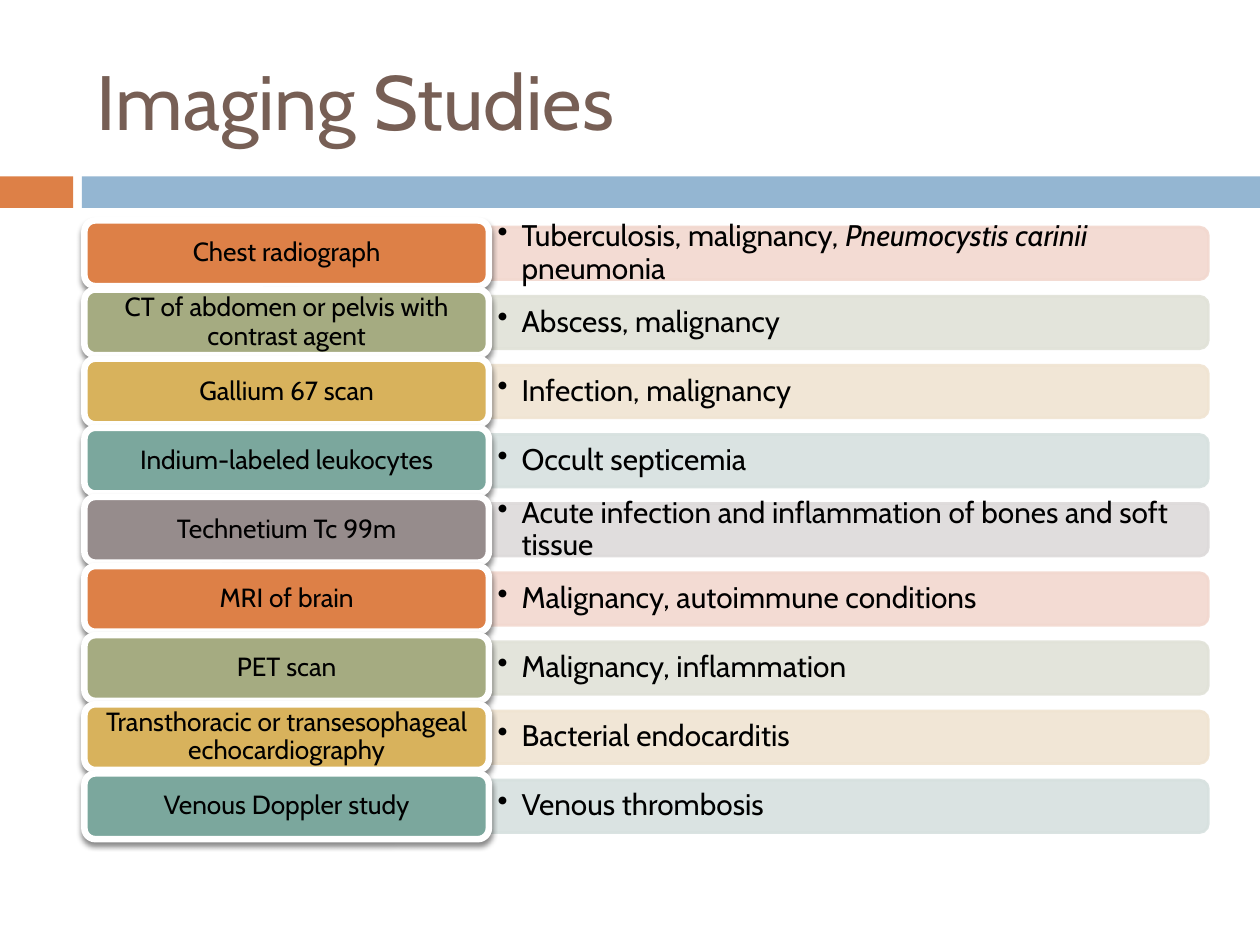
from dataclasses import dataclass
from itertools import cycle

from lxml.etree import SubElement
from pptx import Presentation
from pptx.dml.color import RGBColor
from pptx.enum.shapes import MSO_SHAPE as Preset
from pptx.enum.text import MSO_ANCHOR as Anchor, PP_ALIGN as Align
from pptx.oxml.ns import qn
from pptx.util import Inches, Pt

SLIDE_W, SLIDE_H = 10, 7.5
FONT = "Cabin"
COLORS = {
    "title": "775F55",
    "text": "000000",
    "edge": "FFFFFF",
    "orange": "DD8047",
    "blue": "94B6D2",
    "olive": "A5AB81",
    "gold": "D8B25C",
    "teal": "7BA79D",
    "gray": "968C8C",
    "orange_tint": "F2D8CF",
    "olive_tint": "E1E2D8",
    "gold_tint": "F0E4D2",
    "teal_tint": "D7E1DF",
    "gray_tint": "DDDADA",
}
PALETTE = ("orange", "olive", "gold", "teal", "gray")

STUDY_LEFT, STUDY_W = 0.067 * SLIDE_W, 0.321 * SLIDE_W
FINDING_LEFT, FINDING_W = STUDY_LEFT + STUDY_W, 0.571 * SLIDE_W
ROWS_TOP, ROWS_H = 1.75, 4.91
STUDY_SHARE, GAP_SHARE = 0.95, 0.05
FINDING_SHARE = 0.8


@dataclass(frozen=True)
class Box:
    left: float
    top: float
    width: float
    height: float

    def lengths(self) -> tuple:
        return tuple(map(Inches, (self.left, self.top, self.width, self.height)))

    def centered(self, width: float, height: float) -> "Box":
        return Box(self.left + (self.width - width) / 2,
                   self.top + (self.height - height) / 2, width, height)


@dataclass(frozen=True)
class Study:
    name: str
    finding: tuple[str, ...]


STUDIES = (
    Study("Chest radiograph",
          ("Tuberculosis, malignancy, ", "Pneumocystis carinii", " pneumonia")),
    Study("CT of abdomen or pelvis with contrast agent", ("Abscess, malignancy",)),
    Study("Gallium 67 scan", ("Infection, malignancy",)),
    Study("Indium-labeled leukocytes", ("Occult septicemia",)),
    Study("Technetium Tc 99m",
          ("Acute infection and inflammation of bones and soft tissue",)),
    Study("MRI of brain", ("Malignancy, autoimmune conditions",)),
    Study("PET scan", ("Malignancy, inflammation",)),
    Study("Transthoracic or transesophageal echocardiography",
          ("Bacterial endocarditis",)),
    Study("Venous Doppler study", ("Venous thrombosis",)),
)


def write(shape, *parts: str, size: float, color: str = "text", align=Align.LEFT,
          inset: tuple[float, float] = (0.1, 0.05), line_spacing: float = 1,
          space_after: float = 0, bullet_indent: float = 0) -> None:
    frame = shape.text_frame
    frame.word_wrap = True
    frame.vertical_anchor = Anchor.MIDDLE
    frame.margin_left = frame.margin_right = Inches(inset[0])
    frame.margin_top = frame.margin_bottom = Inches(inset[1])
    paragraph = frame.paragraphs[0]
    paragraph.alignment = align
    paragraph.line_spacing = line_spacing
    paragraph.space_after = Pt(space_after)
    if bullet_indent:
        properties = paragraph._p.get_or_add_pPr()
        properties.set("marL", str(Inches(bullet_indent)))
        properties.set("indent", str(-Inches(bullet_indent)))
        SubElement(properties, qn("a:buChar"), char="•")
    for index, part in enumerate(parts):
        run = paragraph.add_run()
        run.text = part
        run.font.name = FONT
        run.font.size = Pt(size)
        run.font.italic = index % 2 == 1
        run.font.color.rgb = RGBColor.from_string(COLORS[color])


def add_block(slide, preset, box: Box, fill: str, edge: str = "",
              edge_width: float = 0):
    block = slide.shapes.add_shape(preset, *box.lengths())
    block.shadow.inherit = False
    block.fill.solid()
    block.fill.fore_color.rgb = RGBColor.from_string(COLORS[fill])
    if edge:
        block.line.color.rgb = RGBColor.from_string(COLORS[edge])
        block.line.width = Pt(edge_width)
    else:
        block.line.fill.background()
    return block


def add_alpha(color, percent: int) -> None:
    SubElement(color, qn("a:alpha"), val=str(percent * 1000))


def add_drop_shadow(block) -> None:
    effects = block._element.spPr.find(qn("a:effectLst"))
    shadow = SubElement(effects, qn("a:outerShdw"), blurRad=str(Pt(3)),
                        dist=str(Pt(2.4)), dir="5400000", rotWithShape="0")
    add_alpha(SubElement(shadow, qn("a:srgbClr"), val=COLORS["text"]), 45)


def add_finding(slide, box: Box, parts: tuple[str, ...], tint: str) -> None:
    upright = box.centered(box.height, box.width)
    bar = add_block(slide, Preset.ROUND_2_SAME_RECTANGLE, upright, tint, tint, 1.5)
    bar.rotation = 90
    for color in bar._element.spPr.iter(qn("a:srgbClr")):
        add_alpha(color, 90)
    area = Box(box.left, box.top + 0.02, box.width - 0.02, box.height - 0.04)
    write(slide.shapes.add_textbox(*area.lengths()), *parts, size=17,
          inset=(0.07, 0.04), line_spacing=0.9, space_after=2.5,
          bullet_indent=0.19)


def add_study(slide, box: Box, name: str, fill: str) -> None:
    label = add_block(slide, Preset.ROUNDED_RECTANGLE, box, fill, "edge", 3.75)
    add_drop_shadow(label)
    write(label, name, size=15, align=Align.CENTER, inset=(0.06, 0.03),
          line_spacing=0.9, space_after=5.25)


def add_rows(slide) -> None:
    pitch = ROWS_H / (len(STUDIES) - GAP_SHARE)
    height = pitch * STUDY_SHARE
    for row, (study, hue) in enumerate(zip(STUDIES, cycle(PALETTE))):
        top = ROWS_TOP + row * pitch
        finding_row = Box(FINDING_LEFT, top, FINDING_W, height)
        add_finding(slide, finding_row.centered(FINDING_W, height * FINDING_SHARE),
                    study.finding, f"{hue}_tint")
        add_study(slide, Box(STUDY_LEFT, top, STUDY_W, height), study.name, hue)


def main() -> None:
    deck = Presentation()
    deck.slide_width, deck.slide_height = Inches(SLIDE_W), Inches(SLIDE_H)
    slide = deck.slides.add_slide(deck.slide_layouts[6])
    add_block(slide, Preset.RECTANGLE, Box(0, 1.4, 0.58, 0.25), "orange")
    add_block(slide, Preset.RECTANGLE, Box(0.65, 1.4, 9.35, 0.25), "blue")
    title = slide.shapes.add_textbox(*Box(STUDY_LEFT, 0.25, 8.92, 1.08).lengths())
    write(title, "Imaging Studies", size=44, color="title")
    add_rows(slide)
    deck.save("out.pptx")


if __name__ == "__main__":
    main()
